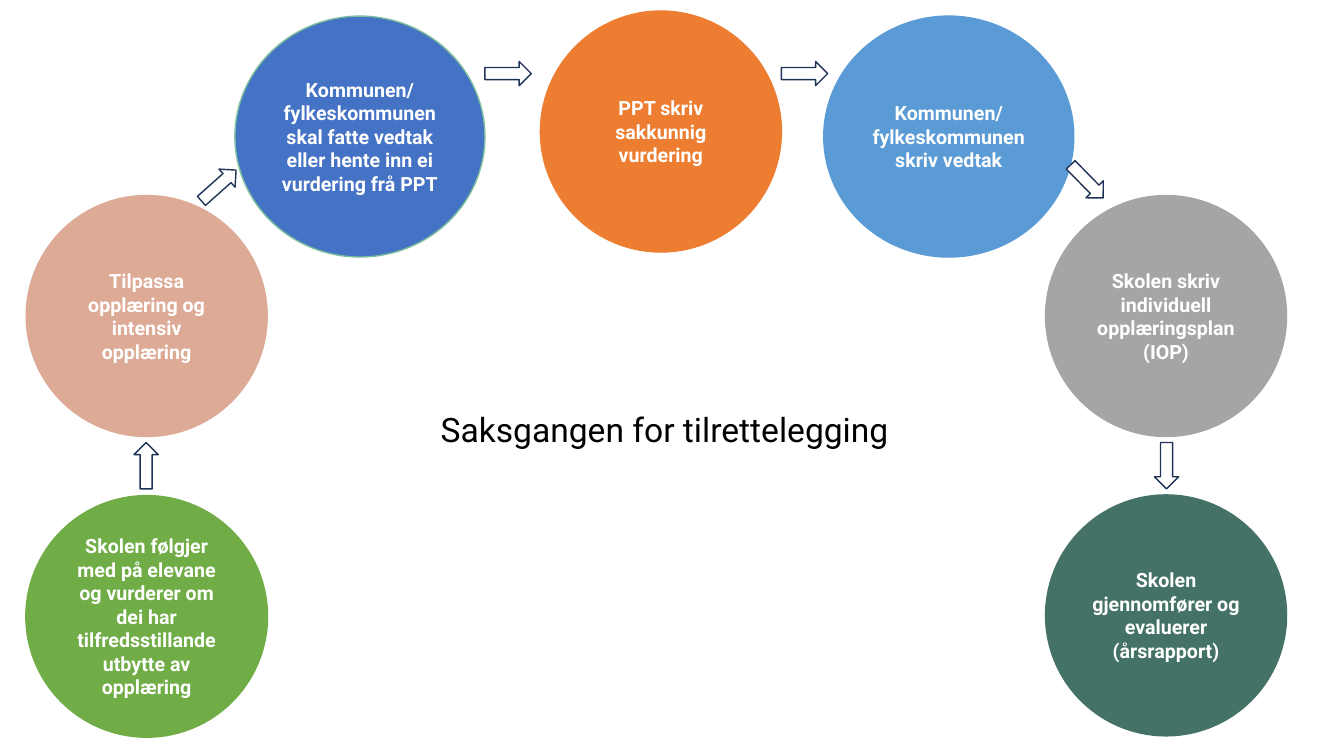
from pptx import Presentation
from pptx.dml.color import RGBColor
from pptx.enum.shapes import MSO_SHAPE
from pptx.enum.text import MSO_ANCHOR, PP_ALIGN
from pptx.util import Inches, Pt

CIRCLE = MSO_SHAPE.FLOWCHART_CONNECTOR
ARROW = MSO_SHAPE.RIGHT_ARROW
MIDDLE = MSO_ANCHOR.MIDDLE
LEFT, CENTER = PP_ALIGN.LEFT, PP_ALIGN.CENTER

COLORS = {
    "white": "FFFFFF", "black": "000000", "navy": "1E3256",
    "green": "70AD47", "salmon": "DDAA95", "blue": "4472C4",
    "mint": "7DBF9D", "orange": "ED7D31", "sky": "5B9BD5",
    "gray": "A5A5A5", "teal": "447266",
}
DIAMETER, WIDE = 2.39, 2.48
ARROW_LENGTH, ARROW_WIDTH = 0.46, 0.24

# Steps: left, top, width, fill, line, line width, text
STEPS = [
    (0.26, 4.92, DIAMETER, "green", "green", 1.5,
     "Skolen følgjer med på elevane og vurderer om dei har "
     "tilfredsstillande utbytte av opplæring"),
    (0.26, 1.94, DIAMETER, "salmon", "salmon", 1,
     "Tilpassa opplæring og intensiv opplæring"),
    (2.33, 0.16, WIDE, "blue", "mint", 1,
     "Kommunen/ fylkeskommunen skal fatte vedtak eller hente inn ei "
     "vurdering frå PPT"),
    (5.36, 0.11, DIAMETER, "orange", "orange", 1,
     "PPT skriv sakkunnig vurdering"),
    (8.17, 0.16, WIDE, "sky", "sky", 1,
     "Kommunen/ fylkeskommunen skriv vedtak"),
    (10.37, 1.94, DIAMETER, "gray", "gray", 1,
     "Skolen skriv individuell opplæringsplan (IOP)"),
    (10.37, 4.91, DIAMETER, "teal", "teal", 1,
     "Skolen gjennomfører og evaluerer (årsrapport)"),
]

# Arrows: left, top, rotation
ARROWS = [
    (1.22, 4.5, 270), (1.94, 1.72, 318.3), (4.81, 0.61, 0),
    (7.75, 0.61, 0), (10.55, 1.68, 45.5), (11.34, 4.5, 90),
]


class FlowSlide:
    font = "Roboto"

    def __init__(self, prs):
        self.s = prs.slides.add_slide(prs.slide_layouts[5])

    def color(self, name):
        return RGBColor.from_string(COLORS[name])

    def set_text(self, sp, text, size, color, align, bold=False):
        tf = sp.text_frame
        tf.text = text
        tf.word_wrap = True
        tf.vertical_anchor = MIDDLE
        p = tf.paragraphs[0]
        p.alignment = align
        font = p.runs[0].font
        font.name, font.size, font.bold = self.font, Pt(size), bold
        font.color.rgb = self.color(color)

    def title(self, left, top, width, height, text):
        sp = self.s.shapes.title
        sp.left, sp.top = Inches(left), Inches(top)
        sp.width, sp.height = Inches(width), Inches(height)
        self.set_text(sp, text, 24, "black", LEFT)

    def shape(self, kind, left, top, width, height, fill, line, weight=1):
        sp = self.s.shapes.add_shape(kind, Inches(left), Inches(top),
                                     Inches(width), Inches(height))
        sp.shadow.inherit = False
        sp.fill.solid()
        sp.fill.fore_color.rgb = self.color(fill)
        sp.line.color.rgb = self.color(line)
        sp.line.width = Pt(weight)
        return sp

    def step(self, left, top, width, fill, line, weight, text):
        sp = self.shape(CIRCLE, left, top, width, DIAMETER, fill, line, weight)
        self.set_text(sp, text, 14, "white", CENTER, bold=True)

    def arrow(self, left, top, rotation):
        sp = self.shape(ARROW, left, top, ARROW_LENGTH, ARROW_WIDTH,
                        "white", "navy")
        sp.rotation = rotation


def main():
    prs = Presentation()
    prs.slide_width, prs.slide_height = Inches(13.33), Inches(7.5)
    slide = FlowSlide(prs)

    # Title in the middle of the arc
    slide.title(4.27, 4.01, 4.79, 0.5, "Saksgangen for tilrettelegging")

    # Process steps and the arrows between them
    for step in STEPS:
        slide.step(*step)
    for arrow in ARROWS:
        slide.arrow(*arrow)

    prs.save("out.pptx")


if __name__ == "__main__":
    main()
